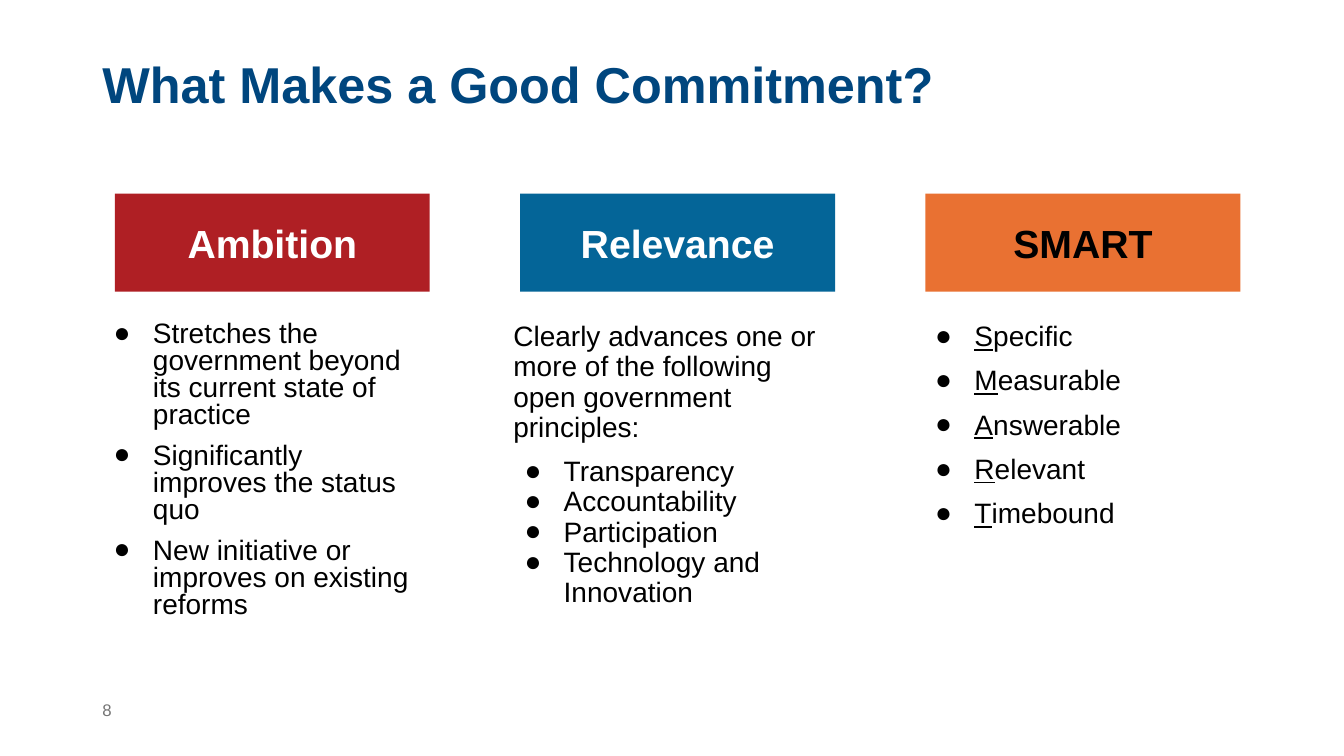
import pptx
import pptx.util
import pptx.dml.color
import pptx.enum.shapes
import pptx.enum.text
import pptx.oxml
import pptx.oxml.ns

Pt = pptx.util.Pt
ALIGN = pptx.enum.text.PP_ALIGN
MIDDLE = pptx.enum.text.MSO_ANCHOR.MIDDLE
TOP = pptx.enum.text.MSO_ANCHOR.TOP

BODY = {"size": Pt(20), "name": "Arial", "color": "000000"}
HEADING = {"size": Pt(28), "name": "Arial", "bold": True}
TITLE = {"size": Pt(36), "name": "Arial", "bold": True, "color": "00467E"}
NUMBER = {"size": Pt(12), "name": "Arial", "color": "757575"}

COLUMNS = [
    {
        "heading": "Ambition", "fill": "AF1F24", "color": "FFFFFF",
        "intro": None, "spacing": 0.8, "gap": 10, "underline_initial": False,
        "bullets": [
            "Stretches the government beyond its current state of practice",
            "Significantly improves the status quo",
            "New initiative or improves on existing reforms",
        ],
    },
    {
        "heading": "Relevance", "fill": "046598", "color": "FFFFFF",
        "intro": "Clearly advances one or more of the following "
                 "open government principles:",
        "spacing": 0.9, "gap": 0, "underline_initial": False,
        "bullets": ["Transparency", "Accountability", "Participation",
                    "Technology and Innovation"],
    },
    {
        "heading": "SMART", "fill": "E97132", "color": "000000",
        "intro": None, "spacing": 0.9, "gap": 10, "underline_initial": True,
        "bullets": ["Specific", "Measurable", "Answerable", "Relevant", "Timebound"],
    },
]


def rgb(value):
    return pptx.dml.color.RGBColor.from_string(value)


def add_run(paragraph, text, style):
    run = paragraph.add_run()
    run.text = text
    for name, value in style.items():
        if name == "color":
            run.font.color.rgb = rgb(value)
        else:
            setattr(run.font, name, value)


def set_frame(shape, anchor, vertical_margin=3.6):
    frame = shape.text_frame
    settings = {
        "word_wrap": True, "vertical_anchor": anchor,
        "margin_left": Pt(7.2), "margin_right": Pt(7.2),
        "margin_top": Pt(vertical_margin), "margin_bottom": Pt(vertical_margin),
    }
    for name, value in settings.items():
        setattr(frame, name, value)
    return frame


def add_text_frame(slide, box, anchor):
    return set_frame(slide.shapes.add_textbox(*map(Pt, box)), anchor)


def add_bullet(paragraph):
    properties = paragraph._p.get_or_add_pPr()
    properties.set("marL", str(Pt(36)))
    properties.set("indent", str(-Pt(28)))
    namespace = pptx.oxml.ns.nsdecls("a")
    for xml in (
        f'<a:buClr {namespace}><a:srgbClr val="000000"/></a:buClr>',
        f'<a:buFont {namespace} typeface="Arial"/>',
        f'<a:buChar {namespace} char="●"/>',
    ):
        properties.append(pptx.oxml.parse_xml(xml))


def add_line(slide, box, text, style, spacing=1.0):
    paragraph = add_text_frame(slide, box, MIDDLE).paragraphs[0]
    paragraph.line_spacing = spacing
    add_run(paragraph, text, style)


def add_heading(slide, box, column):
    shape = slide.shapes.add_shape(
        pptx.enum.shapes.MSO_SHAPE.RECTANGLE, *map(Pt, box))
    shape.shadow.inherit = False
    shape.fill.solid()
    shape.fill.fore_color.rgb = rgb(column["fill"])
    shape.line.fill.background()
    paragraph = set_frame(shape, MIDDLE, 7.2).paragraphs[0]
    paragraph.alignment = ALIGN.CENTER
    add_run(paragraph, column["heading"], {**HEADING, "color": column["color"]})


def add_body(slide, box, column):
    frame = add_text_frame(slide, box, TOP)
    intro = column["intro"]
    entries = ([intro] if intro else []) + column["bullets"]
    for index, text in enumerate(entries):
        paragraph = frame.paragraphs[0] if index == 0 else frame.add_paragraph()
        paragraph.alignment = ALIGN.LEFT
        if text != intro:
            add_bullet(paragraph)
        paragraph.line_spacing = column["spacing"]
        if index:
            follows_intro = intro and index == 1
            paragraph.space_before = Pt(10 if follows_intro else column["gap"])
        if column["underline_initial"]:
            add_run(paragraph, text[0], {**BODY, "underline": True})
            text = text[1:]
        add_run(paragraph, text, BODY)


def add_columns(slide, box):
    left, top, width, height = box
    for index, column in enumerate(COLUMNS):
        heading_left = left + 15.8 + 289.5 * index
        add_heading(slide, (heading_left, top, 225, 70), column)
        body_left = left + 293.4 * index
        add_body(slide, (body_left, top + 88.4, 241, height - 88.4), column)


def main():
    presentation = pptx.Presentation()
    presentation.slide_width = Pt(960)
    presentation.slide_height = Pt(540)
    slide = presentation.slides.add_slide(presentation.slide_layouts[6])
    add_line(slide, (66, 24.5, 828, 75.6), "What Makes a Good Commitment?", TITLE, 0.9)
    add_columns(slide, (66.2, 138.4, 828, 342))
    add_line(slide, (66, 492.5, 47, 28.8), "8", NUMBER)
    presentation.save("out.pptx")


if __name__ == "__main__":
    main()
